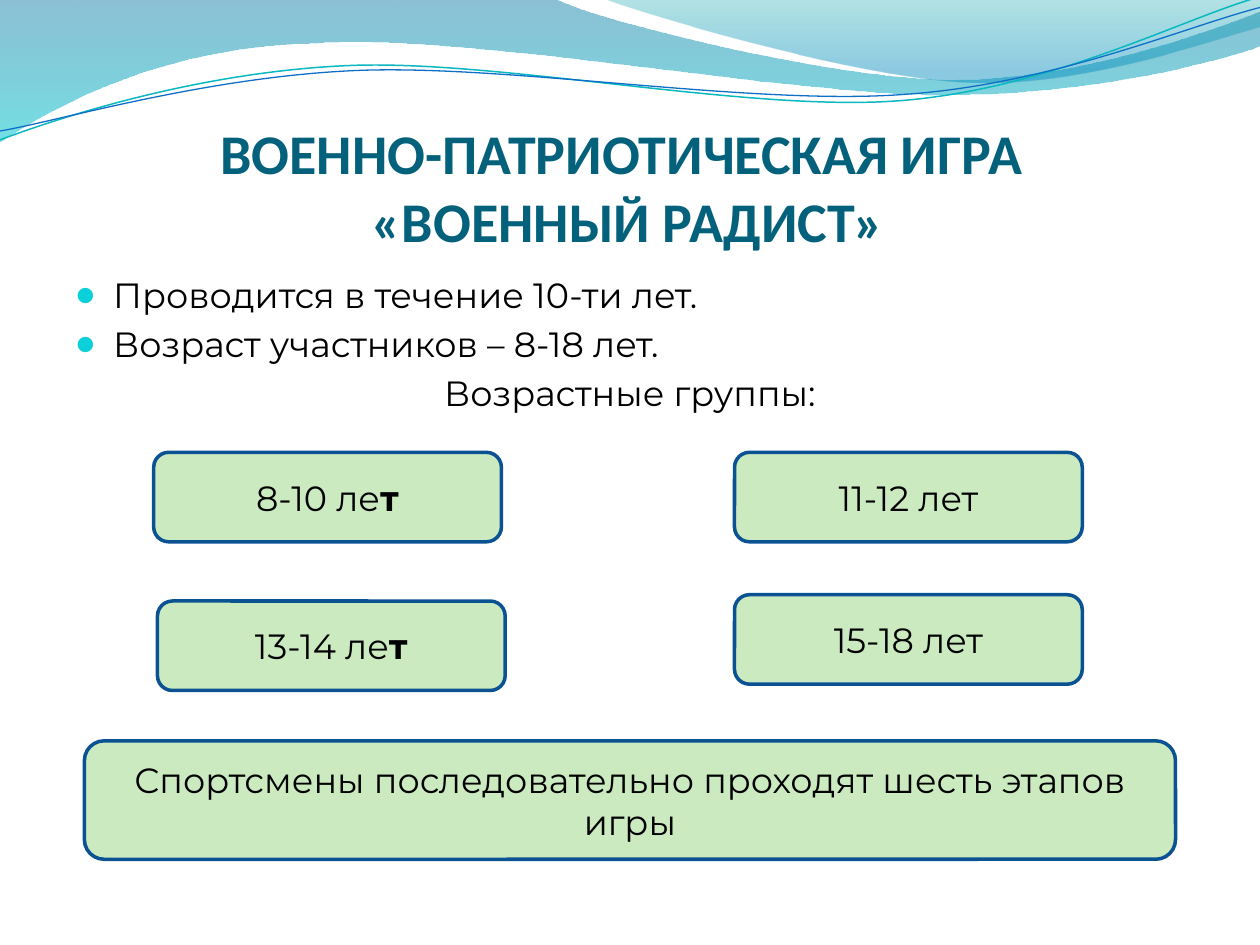
from dataclasses import dataclass
from math import cos, radians, sin
from typing import NamedTuple

from lxml.etree import SubElement
from pptx import Presentation
from pptx.dml.color import RGBColor
from pptx.enum.shapes import MSO_SHAPE
from pptx.enum.text import MSO_ANCHOR, PP_ALIGN
from pptx.oxml.ns import qn
from pptx.shapes.autoshape import Shape
from pptx.slide import Slide
from pptx.text.text import TextFrame, _Paragraph
from pptx.util import Inches, Pt


class TextStyle(NamedTuple):
    font: str
    size: int
    color: str


@dataclass(frozen=True)
class Theme:
    title: TextStyle = TextStyle("Calibri", 32, "04617B")
    body: TextStyle = TextStyle("Montserrat", 20, "000000")
    bullet_color: str = "0BD0D9"
    bullet_font: str = "Calibri"
    box_fill: str = "CBEAC0"
    box_line: str = "0B5292"
    box_line_width: float = 2


class Stop(NamedTuple):
    position: float
    color: str
    opacity: int


class Box(NamedTuple):
    left: float
    top: float
    width: float
    height: float
    text: str
    bold_ending: str = ""


class Wave(NamedTuple):
    start: tuple
    segments: list
    stops: tuple


class Strand(NamedTuple):
    start: tuple
    segments: list
    center: tuple
    color: str
    width: float


THEME = Theme()
STRAND_TILT = -2.7

WAVES = [
    Wave((0, 0), [
        [(4.4, -0.01)],
        [(4.76, 0.17), (6.64, 0.63), (7.58, 0.63)],
        [(8.53, 0.63), (9.58, 0.26), (10, 0.09)],
        [(10.01, 0.36)],
        [(9.83, 0.44), (8.7, 0.76), (7.46, 0.75)],
        [(6.22, 0.75), (3.82, 0.28), (2.57, 0.34)],
        [(1.29, 0.36), (0.46, 0.83), (-0.01, 1.13)],
    ], (Stop(0, "0074A1", 45), Stop(1, "00C6CF", 55))),
    Wave((4.79, -0.01), [
        [(5.09, 0.11), (6.82, 0.62), (7.69, 0.65)],
        [(8.56, 0.69), (9.61, 0.32), (10, 0.21)],
        [(10, 0)],
    ], (Stop(0, "00A1A9", 30), Stop(0.8, "008BBF", 45))),
]
STRANDS = [
    Strand((0, 1.11), [
        [(0.48, 0.93), (1.58, 0.57), (2.77, 0.52)],
        [(3.95, 0.47), (5.93, 0.89), (7.13, 0.8)],
        [(8.33, 0.71), (9.38, 0.15), (9.98, -0.02)],
    ], (4.99, 0.58), "0AB8BF", 0.85),
    Strand((0, 1.04), [
        [(0.47, 0.96), (1.64, 0.61), (2.83, 0.56)],
        [(4.03, 0.51), (5.97, 0.84), (7.17, 0.75)],
        [(8.36, 0.67), (9.41, 0.21), (10, 0.06)],
    ], (5, 0.59), "0F6FC6", 0.75),
]
AGE_SIZE = (2.76, 0.71)
BOXES = [
    Box(1.22, 3.59, *AGE_SIZE, "8-10 ле", "т"),
    Box(5.83, 3.59, *AGE_SIZE, "11-12 лет"),
    Box(1.25, 4.77, *AGE_SIZE, "13-14 ле", "т"),
    Box(5.83, 4.72, *AGE_SIZE, "15-18 лет"),
    Box(0.67, 5.88, 8.66, 0.94, "Спортсмены последовательно проходят шесть этапов игры"),
]
TITLE_LINES = ["ВОЕННО-ПАТРИОТИЧЕСКАЯ ИГРА ", "«ВОЕННЫЙ РАДИСТ»"]
BULLETS = ["Проводится в течение 10-ти лет.", "Возраст участников – 8-18 лет."]
GROUPS_HEADING = "Возрастные группы:"


def rgb(color: str) -> RGBColor:
    return RGBColor.from_string(color)


def add_curve(slide: Slide, start: tuple, segments: list, closed: bool) -> Shape:
    builder = slide.shapes.build_freeform(Inches(start[0]), Inches(start[1]))
    points = [(Inches(x), Inches(y)) for segment in segments for x, y in segment]
    builder.add_line_segments(points, close=closed)
    shape = builder.convert_to_shape()
    shape.shadow.inherit = False
    lines = iter(list(shape.element.spPr.iter(qn("a:lnTo"))))
    for segment in segments:
        first, *others = [next(lines) for _ in segment]
        if others:
            first.tag = qn("a:cubicBezTo")
        for other in others:
            first.append(other[0])
            other.getparent().remove(other)
    return shape


def add_wave(slide: Slide, wave: Wave) -> None:
    shape = add_curve(slide, wave.start, wave.segments, True)
    shape.line.fill.background()
    shape.fill.gradient()
    shape.fill.gradient_angle = 270
    for gradient_stop, stop in zip(shape.fill.gradient_stops, wave.stops):
        gradient_stop.position = stop.position
        gradient_stop.color.rgb = rgb(stop.color)
    colors = list(shape.element.spPr.iter(qn("a:srgbClr")))
    for color, stop in zip(colors, wave.stops):
        SubElement(color, qn("a:alpha"), val=str(stop.opacity * 1000))


def untilt(point: tuple, center: tuple) -> tuple:
    angle = radians(-STRAND_TILT)
    x, y = point[0] - center[0], point[1] - center[1]
    return center[0] + x * cos(angle) - y * sin(angle), center[1] + x * sin(angle) + y * cos(angle)


def add_strand(slide: Slide, strand: Strand) -> None:
    segments = [[untilt(point, strand.center) for point in segment] for segment in strand.segments]
    shape = add_curve(slide, untilt(strand.start, strand.center), segments, False)
    shape.rotation = STRAND_TILT
    shape.fill.background()
    shape.line.color.rgb = rgb(strand.color)
    shape.line.width = Pt(strand.width)


def add_run(paragraph: _Paragraph, text: str, style: TextStyle, bold: bool = False) -> None:
    run = paragraph.add_run()
    run.text = text
    run.font.name = style.font
    run.font.size = Pt(style.size)
    run.font.bold = bold
    run.font.color.rgb = rgb(style.color)


def add_bullet(paragraph: _Paragraph) -> None:
    properties = paragraph._p.get_or_add_pPr()
    properties.set("marL", str(Inches(0.3)))
    properties.set("indent", str(Inches(-0.3)))
    color = SubElement(properties, qn("a:buClr"))
    SubElement(color, qn("a:srgbClr"), val=THEME.bullet_color)
    SubElement(properties, qn("a:buSzPct"), val="95000")
    SubElement(properties, qn("a:buFont"), typeface=THEME.bullet_font)
    SubElement(properties, qn("a:buChar"), char="●")


def add_text_frame(slide: Slide, *bounds: float) -> TextFrame:
    frame = slide.shapes.add_textbox(*map(Inches, bounds)).text_frame
    frame.word_wrap = True
    return frame


def add_body(slide: Slide) -> None:
    frame = add_text_frame(slide, 0.5, 2.12, 9, 4.8)
    for index, text in enumerate([*BULLETS, GROUPS_HEADING]):
        paragraph = frame.add_paragraph() if index else frame.paragraphs[0]
        if text in BULLETS:
            add_bullet(paragraph)
        else:
            paragraph.alignment = PP_ALIGN.CENTER
        if index:
            paragraph.space_before = Pt(THEME.body.size * 0.2)
        add_run(paragraph, text, THEME.body)


def add_title(slide: Slide) -> None:
    frame = add_text_frame(slide, 0.3, 0.76, 9.37, 1.25)
    frame.vertical_anchor = MSO_ANCHOR.BOTTOM
    frame.margin_left = frame.margin_right = frame.margin_bottom = Inches(0)
    for index, text in enumerate(TITLE_LINES):
        paragraph = frame.add_paragraph() if index else frame.paragraphs[0]
        paragraph.alignment = PP_ALIGN.CENTER
        add_run(paragraph, text, THEME.title, bold=True)


def add_box(slide: Slide, box: Box) -> None:
    shape = slide.shapes.add_shape(MSO_SHAPE.ROUNDED_RECTANGLE, *map(Inches, box[:4]))
    shape.shadow.inherit = False
    shape.fill.solid()
    shape.fill.fore_color.rgb = rgb(THEME.box_fill)
    shape.line.color.rgb = rgb(THEME.box_line)
    shape.line.width = Pt(THEME.box_line_width)
    shape.text_frame.word_wrap = True
    shape.text_frame.vertical_anchor = MSO_ANCHOR.MIDDLE
    paragraph = shape.text_frame.paragraphs[0]
    paragraph.alignment = PP_ALIGN.CENTER
    add_run(paragraph, box.text, THEME.body)
    if box.bold_ending:
        add_run(paragraph, box.bold_ending, THEME.body, bold=True)


presentation = Presentation()
presentation.slide_width, presentation.slide_height = Inches(10), Inches(7.5)
slide = presentation.slides.add_slide(presentation.slide_layouts[6])
for draw, items in ((add_wave, WAVES), (add_strand, STRANDS)):
    for item in items:
        draw(slide, item)
add_body(slide)
add_title(slide)
for box in BOXES:
    add_box(slide, box)
presentation.save("out.pptx")
